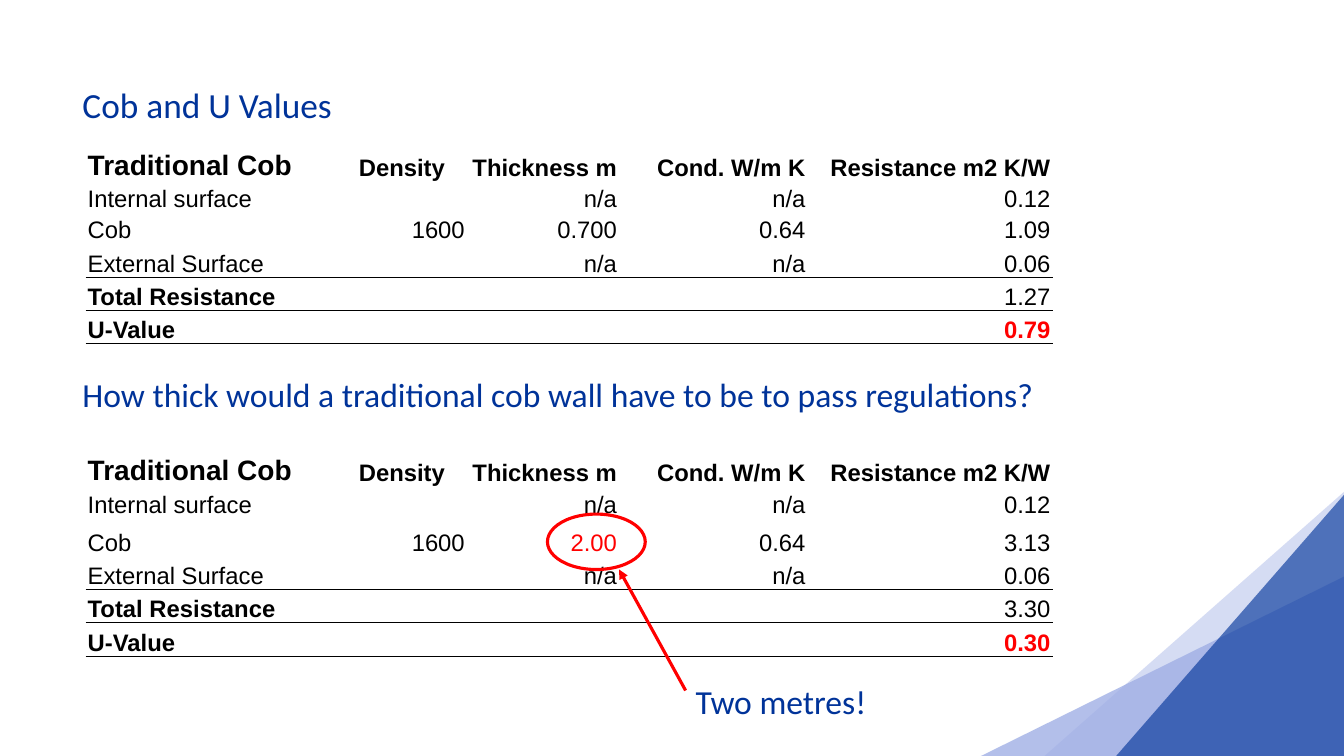
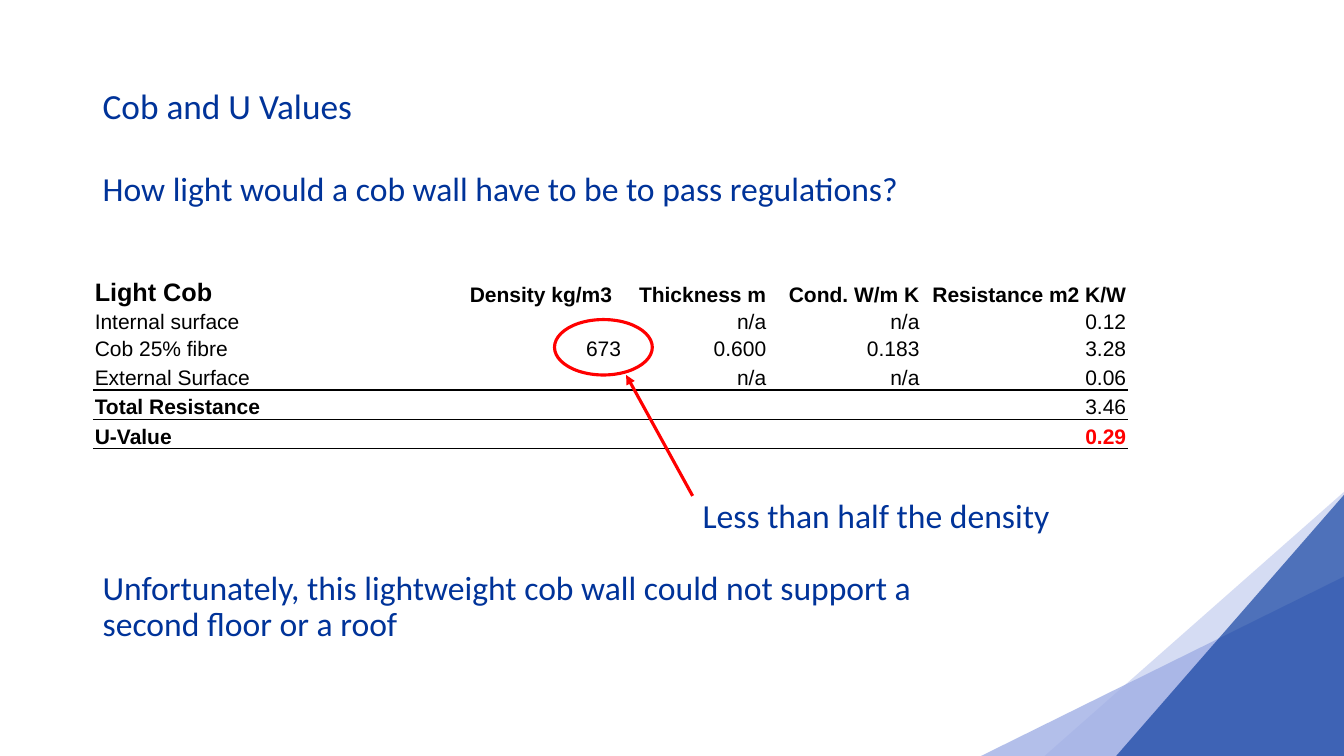
from lxml.etree import SubElement
from pptx import Presentation
from pptx.dml.color import RGBColor
from pptx.enum.shapes import MSO_CONNECTOR, MSO_SHAPE
from pptx.enum.text import MSO_ANCHOR, PP_ALIGN
from pptx.oxml import parse_xml
from pptx.oxml.ns import nsdecls, qn
from pptx.util import Inches, Pt

SLIDE_WIDTH, SLIDE_HEIGHT = 13.33, 7.5
NAVY, RED, BLACK = "003399", "FF0000", "000000"
HEADING_FONT, TABLE_FONT = "Calibri", "Arial"
TITLE_SIZE, BODY_SIZE = 25.2, 24
PLAIN_TABLE_STYLE = "{2D5ABB26-0587-4C30-8999-92F81FD0307C}"

# width, height, colour, opacity in percent
CORNER_TRIANGLES = [
    (2.97, 2.62, "C5CEEF", 71),
    (3.6, 1.78, "9FAEE5", 79),
    (2.26, 2.59, NAVY, 63),
]


def rgb(hex_colour):
    return RGBColor.from_string(hex_colour)


def write_run(paragraph, text, *, size, font, colour, bold=False):
    run = paragraph.add_run()
    run.text = text
    run.font.size = Pt(size)
    run.font.name = font
    run.font.bold = bold
    run.font.color.rgb = rgb(colour)


def add_text(slide, text, left, top, width, height, *, size=BODY_SIZE):
    text_box = slide.shapes.add_textbox(
        Inches(left), Inches(top), Inches(width), Inches(height))
    frame = text_box.text_frame
    frame.word_wrap = True
    frame.vertical_anchor = MSO_ANCHOR.MIDDLE
    paragraph = frame.paragraphs[0]
    paragraph.line_spacing = 0.9
    write_run(paragraph, text, size=size, font=HEADING_FONT, colour=NAVY)


def add_corner_triangles(slide):
    """Stack translucent right triangles in the bottom right corner."""
    for width, height, colour, opacity in CORNER_TRIANGLES:
        # The shape is turned a quarter, so its sides swap about its centre.
        inset = (width + height) / 2
        triangle = slide.shapes.add_shape(
            MSO_SHAPE.ISOSCELES_TRIANGLE,
            Inches(SLIDE_WIDTH - inset), Inches(SLIDE_HEIGHT - inset),
            Inches(height), Inches(width))
        triangle.adjustments[0] = 0
        triangle.rotation = 270
        triangle.shadow.inherit = False
        triangle.line.fill.background()
        triangle.fill.solid()
        triangle.fill.fore_color.rgb = rgb(colour)
        colour_element = triangle.fill._xPr.find(qn("a:solidFill"))[0]
        SubElement(colour_element, qn("a:alpha"), val=str(opacity * 1000))


def add_rule_below(cell):
    cell._tc.get_or_add_tcPr().insert(0, parse_xml(
        f'<a:lnB {nsdecls("a")} w="{Pt(1)}"><a:solidFill>'
        f'<a:srgbClr val="{BLACK}"/></a:solidFill></a:lnB>'))


def add_resistance_table(slide, rows, left, top, column_widths, row_heights, *,
                         size, heading_size, red_cells):
    """Draw a heading row, three layers, and two totals with rules."""
    graphic_frame = slide.shapes.add_table(
        len(rows), len(column_widths), Inches(left), Inches(top),
        Inches(sum(column_widths)), Inches(sum(row_heights)))
    table = graphic_frame.table
    table.first_row = table.horz_banding = False
    table._tbl.tblPr.find(qn("a:tableStyleId")).text = PLAIN_TABLE_STYLE
    for column, width in zip(table.columns, column_widths):
        column.width = Inches(width)
    for row, height in zip(table.rows, row_heights):
        row.height = Inches(height)

    for row_index, row in enumerate(rows):
        for column_index, text in enumerate(row):
            cell = table.cell(row_index, column_index)
            cell.margin_left = cell.margin_right = cell.margin_top = Inches(0.02)
            cell.margin_bottom = 0
            cell.vertical_anchor = MSO_ANCHOR.BOTTOM
            cell.fill.background()
            if row_index >= 3:
                add_rule_below(cell)
            paragraph = cell.text_frame.paragraphs[0]
            if not text:
                end_format = paragraph._p.get_or_add_endParaRPr()
                end_format.set("sz", str(size * 100))
                continue
            is_left = column_index == 0 or (row_index, column_index) == (0, 1)
            paragraph.alignment = PP_ALIGN.LEFT if is_left else PP_ALIGN.RIGHT
            is_u_value = row_index == 5
            is_red = (row_index, column_index) in red_cells
            write_run(
                paragraph, text, font=TABLE_FONT,
                size=heading_size if row_index == column_index == 0 else size,
                colour=RED if is_red else BLACK,
                bold=row_index == 0 or is_u_value
                or (row_index == 4 and column_index == 0))


def add_callout(slide, text, left, top, label_width, label_height):
    """Ring a value at left, top and point at it from a label below."""
    ring = slide.shapes.add_shape(
        MSO_SHAPE.OVAL, Inches(left), Inches(top), Inches(0.97), Inches(0.55))
    ring.shadow.inherit = False
    ring.fill.background()
    arrow = slide.shapes.add_connector(
        MSO_CONNECTOR.STRAIGHT, Inches(left + 1.37), Inches(top + 1.75),
        Inches(left + 0.71), Inches(top + 0.55))
    for shape in (ring, arrow):
        shape.line.color.rgb = rgb(RED)
        shape.line.width = Pt(2.25)
    SubElement(arrow.line._get_or_add_ln(), qn("a:tailEnd"), type="triangle")
    SubElement(arrow._element.spPr, qn("a:effectLst"))
    add_text(slide, text, left + 1.37, top + 1.67, label_width, label_height)


def resistance_rows(name, density_heading, layer, density, thickness,
                    conductivity, resistance, total, u_value):
    return [
        (name, density_heading, "Thickness m", "Cond. W/m K", "Resistance m2 K/W"),
        ("Internal surface", "", "n/a", "n/a", "0.12"),
        (layer, density, thickness, conductivity, resistance),
        ("External Surface", "", "n/a", "n/a", "0.06"),
        ("Total Resistance", "", "", "", total),
        ("U-Value", "", "", "", u_value),
    ]


def add_base_slide(presentation, left, top, height):
    slide = presentation.slides.add_slide(presentation.slide_layouts[6])
    add_corner_triangles(slide)
    add_text(slide, "Cob and U Values", left, top, 11.5, height, size=TITLE_SIZE)
    return slide


def add_thickness_slide(presentation):
    left = 0.72
    slide = add_base_slide(presentation, left, 0.88, 0.36)
    tables = [
        (1.42, 0.31, ("0.700", "0.64", "1.09", "1.27", "0.79"), {(5, 4)}),
        (4.45, 0.38, ("2.00", "0.64", "3.13", "3.30", "0.30"), {(5, 4), (2, 2)}),
    ]
    for top, cob_height, values, red_cells in tables:
        rows = resistance_rows("Traditional Cob", "Density", "Cob", "1600", *values)
        add_resistance_table(
            slide, rows, 0.85, top, [2.69, 1.09, 1.51, 1.87, 2.43],
            [0.38, 0.31, cob_height, 0.33, 0.33, 0.33],
            size=17, heading_size=20, red_cells=red_cells)
    add_text(slide, "How thick would a traditional cob wall have to be to pass regulations?",
             left, 3.75, 11.5, 0.36)
    add_callout(slide, "Two metres!", 5.43, 5.1, 2.42, 0.43)


def add_density_slide(presentation):
    left = 0.92
    slide = add_base_slide(presentation, left, 0.83, 0.49)
    add_text(slide, "How light would a cob wall have to be to pass regulations?",
             left, 1.71, 11.5, 0.36)
    rows = resistance_rows("Light Cob", "Density kg/m3", "Cob 25% fibre", "673",
                           "0.600", "0.183", "3.28", "3.46", "0.29")
    add_resistance_table(
        slide, rows, left, 2.71, [3.72, 1.54, 1.44, 1.52, 2.05],
        [0.33, 0.27, 0.27, 0.29, 0.29, 0.29],
        size=15, heading_size=18, red_cells={(5, 4)})
    add_text(slide, "Unfortunately, this lightweight cob wall could not support a "
             "second floor or a roof", left, 5.43, 8.71, 1.2)
    add_callout(slide, "Less than half the density", 5.5, 3.17, 4.07, 0.59)


def main():
    presentation = Presentation()
    presentation.slide_width = Inches(SLIDE_WIDTH)
    presentation.slide_height = Inches(SLIDE_HEIGHT)
    add_thickness_slide(presentation)
    add_density_slide(presentation)
    presentation.save("out.pptx")


if __name__ == "__main__":
    main()
